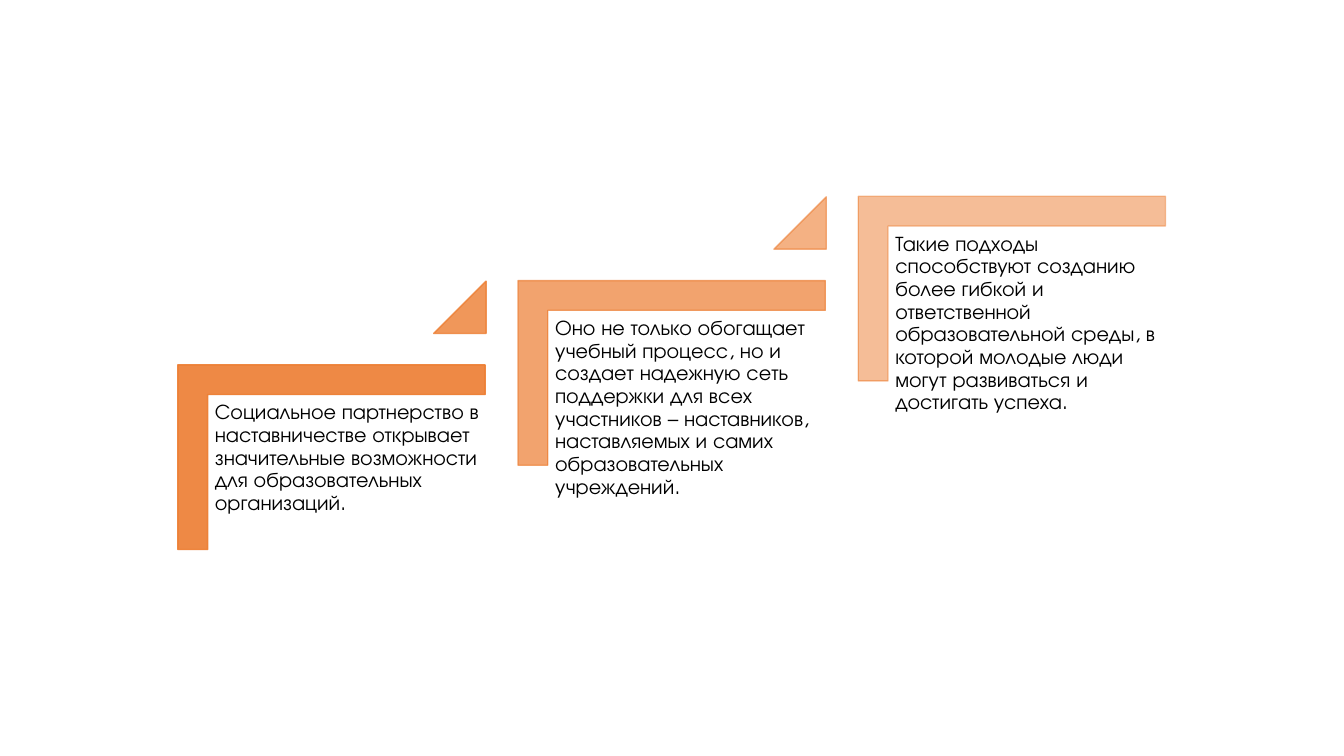
from lxml.etree import SubElement
from pptx import Presentation
from pptx.dml.color import RGBColor
from pptx.enum.shapes import MSO_SHAPE
from pptx.enum.text import MSO_ANCHOR, PP_ALIGN
from pptx.oxml.ns import qn
from pptx.util import Pt

ORANGE = RGBColor(0xED, 0x7D, 0x31)
BLACK = RGBColor(0x00, 0x00, 0x00)

STEP_RIGHT = 243
STEP_UP = 60.2
STEPS = [
    "Социальное партнерство в наставничестве открывает значительные "
    "возможности для образовательных организаций.",
    "Оно не только обогащает учебный процесс, но и создает надежную сеть "
    "поддержки для всех участников – наставников, наставляемых и самих "
    "образовательных учреждений.",
    "Такие подходы способствуют созданию более гибкой и ответственной "
    "образовательной среды, в которой молодые люди могут развиваться "
    "и достигать успеха.",
]


class StairSlide:
    font_name = "TeX Gyre Adventor"
    font_size = 15
    inset = 4.5

    def __init__(self, deck):
        self.slide = deck.slides.add_slide(deck.slide_layouts[6])

    def shape(self, kind, left, top, width, height, opacity, adjustments):
        shape = self.slide.shapes.add_shape(
            kind, Pt(left), Pt(top), Pt(width), Pt(height))
        shape.shadow.inherit = False
        for index, value in enumerate(adjustments):
            shape.adjustments[index] = value
        shape.line.width = Pt(1)
        for fill in (shape.fill, shape.line.fill):
            fill.solid()
            fill.fore_color.rgb = ORANGE
        # Opacity of both fill and outline
        for color in shape._element.spPr.iter(qn("a:srgbClr")):
            SubElement(color, qn("a:alpha")).set("val", str(opacity * 1000))
        return shape

    def bracket(self, left, top, opacity):
        corner = self.shape(MSO_SHAPE.CORNER, left, top, 131.9, 219.5,
                            opacity, [0.161, 0.161])
        corner.rotation = 90

    def triangle(self, left, top, opacity):
        self.shape(MSO_SHAPE.ISOSCELES_TRIANGLE, left, top, 37.4, 37.4,
                   opacity, [1])

    def text(self, left, top, words):
        box = self.slide.shapes.add_textbox(
            Pt(left), Pt(top), Pt(198.5), Pt(174))
        frame = box.text_frame
        frame.word_wrap = True
        frame.vertical_anchor = MSO_ANCHOR.TOP
        frame.margin_left = frame.margin_right = Pt(self.inset)
        frame.margin_top = frame.margin_bottom = Pt(self.inset)
        para = frame.paragraphs[0]
        para.alignment = PP_ALIGN.LEFT
        para.line_spacing = 0.9
        span = para.add_run()
        span.text = words
        span.font.name = self.font_name
        span.font.size = Pt(self.font_size)
        span.font.color.rgb = BLACK


def main():
    deck = Presentation()
    deck.slide_width, deck.slide_height = Pt(960), Pt(540)
    page = StairSlide(deck)

    # Rising steps, each paler than the one before
    for number, words in enumerate(STEPS):
        right, up = number * STEP_RIGHT, number * STEP_UP
        opacity = 90 - 20 * number
        page.bracket(170.8 + right, 216.8 - up, opacity)
        page.text(149 + right, 282.3 - up, words)
        # Triangle leading up to the next step
        if number < len(STEPS) - 1:
            page.triangle(309.8 + right, 200.8 - up, opacity - 10)

    deck.save("out.pptx")


if __name__ == "__main__":
    main()
